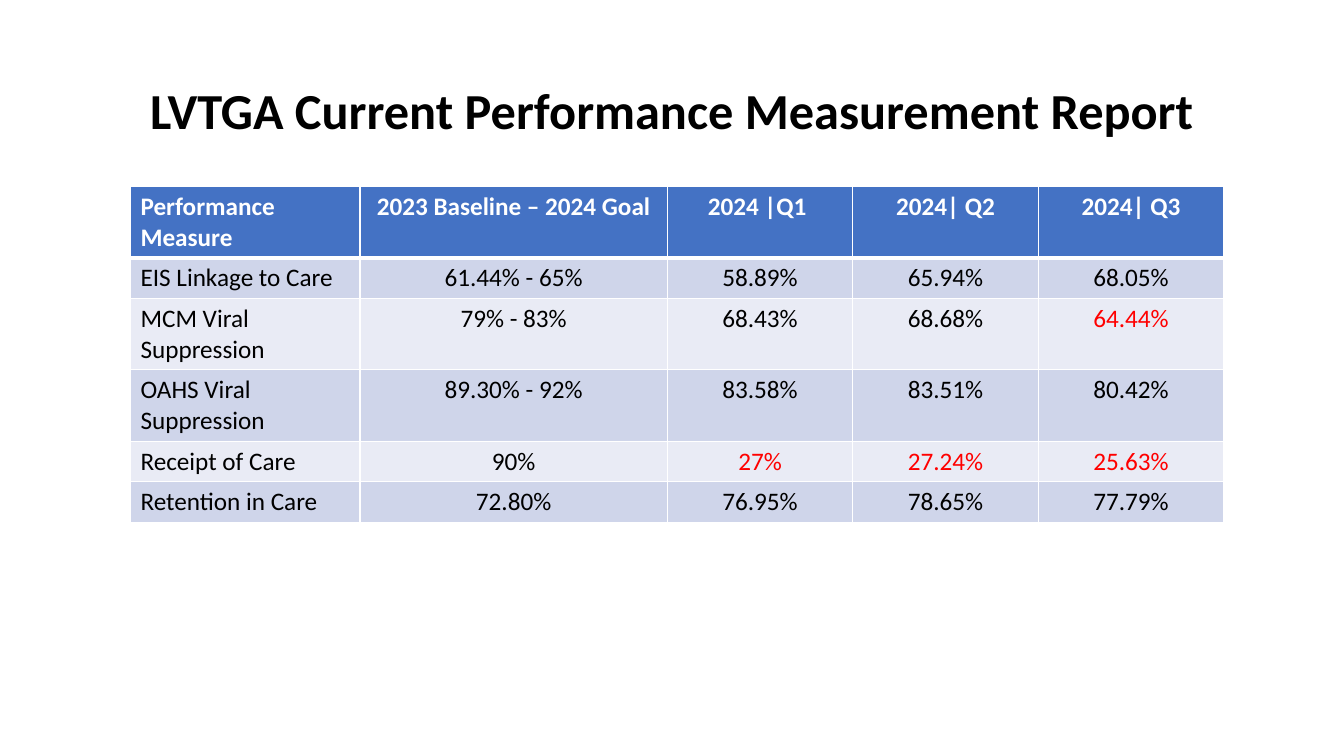
import pptx
import pptx.util
import pptx.dml.color
import pptx.enum.text
import pptx.oxml
import pptx.oxml.ns

Pt = pptx.util.Pt
ALIGN = pptx.enum.text.PP_ALIGN
WHITE, BLACK, RED = "FFFFFF", "000000", "FF0000"


def color(fmt, code):
    fmt.rgb = pptx.dml.color.RGBColor.from_string(code)


def write(frame, text, size=18, bold=False, ink=BLACK, align=ALIGN.CENTER, space=1.0):
    para = frame.paragraphs[0]
    para.alignment = align
    para.line_spacing = space
    run = para.add_run()
    run.text = text
    run.font.name = "Calibri"
    run.font.size = Pt(size)
    run.font.bold = bold
    color(run.font.color, ink)


deck = pptx.Presentation()
deck.slide_width, deck.slide_height = Pt(960), Pt(540)
slide = deck.slides.add_slide(deck.slide_layouts[6])

title = slide.shapes.add_textbox(Pt(66), Pt(28.75), Pt(828), Pt(104.4)).text_frame
title.word_wrap = True
title.vertical_anchor = pptx.enum.text.MSO_ANCHOR.MIDDLE
write(title, "LVTGA Current Performance Measurement Report", size=36, bold=True, space=0.9)

rows = [
    ["Performance Measure", "2023 Baseline – 2024 Goal", "2024 |Q1 ", "2024| Q2", "2024| Q3"],
    ["EIS Linkage to Care", "61.44% - 65%", "58.89%", "65.94%", "68.05%"],
    ["MCM Viral Suppression", "79% - 83%", "68.43%", "68.68%", "64.44%"],
    ["OAHS Viral Suppression", "89.30% - 92%", "83.58%", "83.51%", "80.42%"],
    ["Receipt of Care", "90%", "27%", "27.24%", "25.63%"],
    ["Retention in Care", "72.80%", "76.95%", "78.65%", "77.79%"],
]
widths = [164, 219.5, 132.5, 132.5, 132.5]
heights = [51, 29, 51, 51, 29, 29]
alerts = {(2, 4), (4, 2), (4, 3), (4, 4)}

table = slide.shapes.add_table(
    len(rows), len(widths), Pt(93.2), Pt(133.2), Pt(sum(widths)), Pt(sum(heights))
).table
for col, width in zip(table.columns, widths):
    col.width = Pt(width)

for r, row in enumerate(rows):
    table.rows[r].height = Pt(heights[r])
    head = r == 0
    for c, text in enumerate(row):
        cell = table.cell(r, c)
        props = cell._tc.get_or_add_tcPr()
        for side in "LRTB":
            thick = (head and side == "B") or (r == 1 and side == "T")
            props.append(pptx.oxml.parse_xml(
                f'<a:ln{side} {pptx.oxml.ns.nsdecls("a")} w="{Pt(3 if thick else 1)}">'
                f'<a:solidFill><a:srgbClr val="{WHITE}"/></a:solidFill></a:ln{side}>'
            ))
        cell.fill.solid()
        color(cell.fill.fore_color, "4472C4" if head else "CFD5EA" if r % 2 else "E9EBF5")
        ink = WHITE if head else RED if (r, c) in alerts else BLACK
        write(cell.text_frame, text, bold=head, ink=ink, align=ALIGN.CENTER if c else ALIGN.LEFT)

deck.save("out.pptx")
